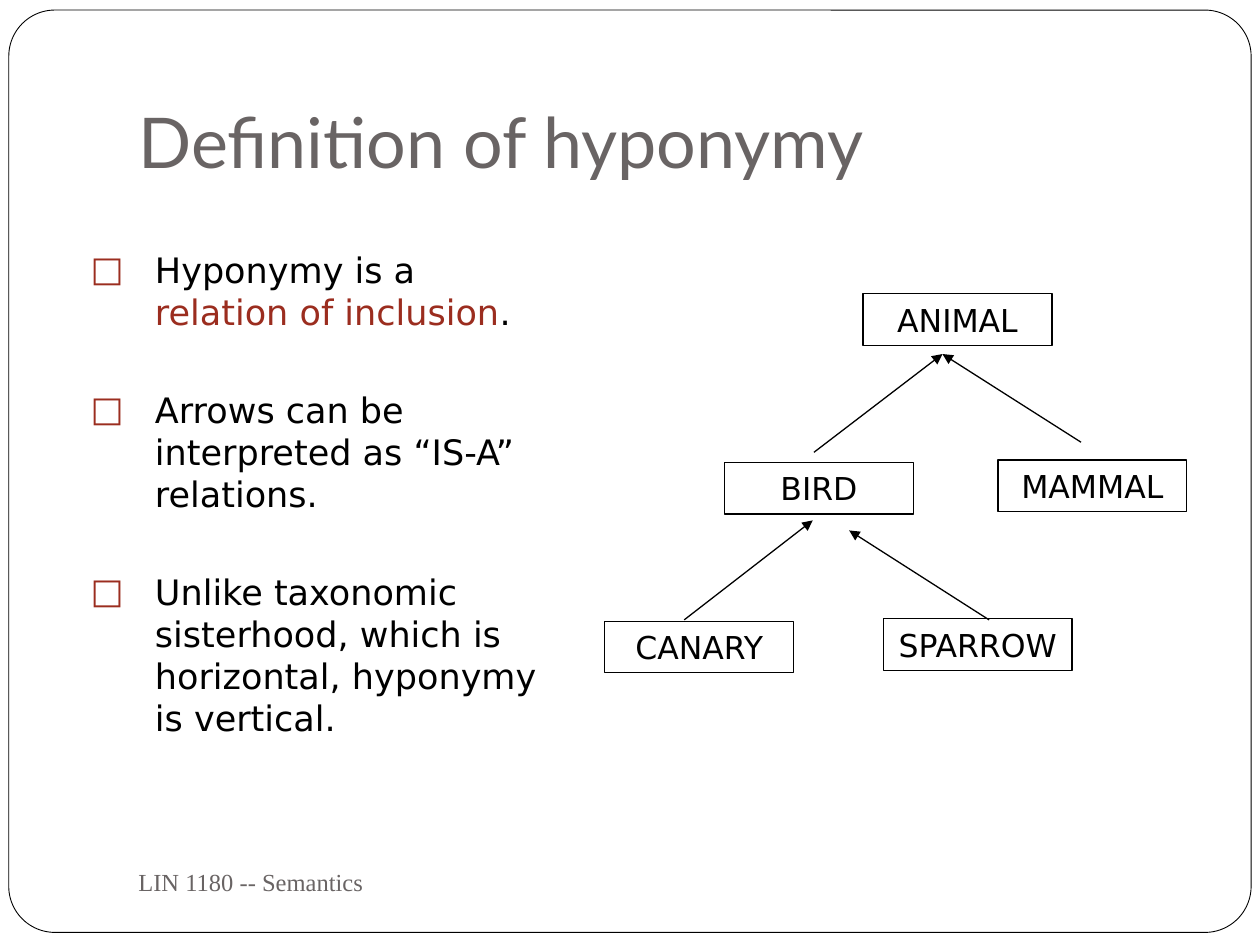
import pptx
import pptx.util
import pptx.dml.color
import pptx.enum.shapes
import pptx.enum.text
import pptx.oxml
import pptx.oxml.ns

COLORS = {"paper": "FFFFFF", "ink": "000000", "gray": "696464", "accent": "9B2D1F"}
ALIGN = pptx.enum.text.PP_ALIGN
ANCHOR = pptx.enum.text.MSO_ANCHOR
SHAPES = pptx.enum.shapes.MSO_SHAPE

presentation = pptx.Presentation()
presentation.slide_width = pptx.util.Inches(10)
presentation.slide_height = pptx.util.Inches(7.5)
slide = presentation.slides.add_slide(presentation.slide_layouts[1])

# Grid of 40 columns by 30 rows
COLUMN = presentation.slide_width / 40
ROW = presentation.slide_height / 30


def place(column, row, *size):
    lengths = [column * COLUMN, row * ROW]
    if size:
        lengths += [size[0] * COLUMN, size[1] * ROW]
    return [pptx.util.Emu(round(length)) for length in lengths]


def add_run(paragraph, text, font_name, size, color):
    run = paragraph.add_run()
    run.text = text
    formats = {"name": font_name, "size": pptx.util.Pt(size)}
    for key, value in formats.items():
        setattr(run.font, key, value)
    run.font.color.rgb = pptx.dml.color.RGBColor.from_string(COLORS[color])


# Rounded frame, then the concept boxes
BOX_SIZE = (6, 1.64)
outlined = [
    ("", SHAPES.ROUNDED_RECTANGLE, (0.28, 0.32, 39.44, 29.28), 0.5),
    ("ANIMAL", SHAPES.RECTANGLE, (27.4, 9.32, *BOX_SIZE), 0.75),
    ("MAMMAL", SHAPES.RECTANGLE, (31.68, 14.6, *BOX_SIZE), 0.75),
    ("BIRD", SHAPES.RECTANGLE, (23, 14.68, *BOX_SIZE), 0.75),
    ("CANARY", SHAPES.RECTANGLE, (19.2, 19.72, *BOX_SIZE), 0.75),
    ("SPARROW", SHAPES.RECTANGLE, (28.04, 19.64, *BOX_SIZE), 0.75),
]
for label, kind, area, line_width in outlined:
    shape = slide.shapes.add_shape(kind, *place(*area))
    shape.shadow.inherit = False
    shape.line.color.rgb = pptx.dml.color.RGBColor.from_string(COLORS["ink"])
    shape.line.width = pptx.util.Pt(line_width)
    if label:
        shape.fill.background()
        shape.text_frame.word_wrap = False
        paragraph = shape.text_frame.paragraphs[0]
        paragraph.alignment = ALIGN.CENTER
        add_run(paragraph, label, "DejaVu Sans", 18, "ink")
    else:
        shape.fill.solid()
        shape.fill.fore_color.rgb = pptx.dml.color.RGBColor.from_string(COLORS["paper"])
        shape.adjustments[0] = 0.05
        # The frame lies behind the placeholders
        slide.shapes.element.insert(2, shape.element)

# Arrows, from the general concept (arrowhead) to the specific one
arrows = [
    ((29.92, 11.24), (25.84, 14.36)),
    ((29.92, 11.24), (34.32, 14.04)),
    ((25.8, 16.52), (21.72, 19.68)),
    ((26.96, 16.84), (31.4, 19.68)),
]
for general, specific in arrows:
    arrow = slide.shapes.add_connector(
        pptx.enum.shapes.MSO_CONNECTOR.STRAIGHT, *place(*general), *place(*specific))
    arrow.line.color.rgb = pptx.dml.color.RGBColor.from_string(COLORS["ink"])
    arrow.line.width = pptx.util.Pt(0.75)
    head = pptx.oxml.parse_xml(
        f'<a:headEnd {pptx.oxml.ns.nsdecls("a")} type="triangle"/>')
    arrow.line._get_or_add_ln().append(head)
    effects = pptx.oxml.parse_xml(f'<a:effectLst {pptx.oxml.ns.nsdecls("a")}/>')
    arrow.element.spPr.append(effects)

# Title, list and footer areas
title = slide.shapes.title
body = slide.placeholders[1]
footer = slide.shapes.add_textbox(*place(4, 27, 17.32, 2))
areas = [
    (title, (4, 1.2, 34, 5), ANCHOR.BOTTOM, 0.1),
    (body, (2.48, 7.68, 15.2, 18.68), ANCHOR.TOP, 0.05),
    (footer, (4, 27, 17.32, 2), ANCHOR.MIDDLE, 0.05),
]
for shape, area, anchor, bottom in areas:
    for key, value in zip(("left", "top", "width", "height"), place(*area)):
        setattr(shape, key, value)
    formats = {
        "word_wrap": True,
        "auto_size": pptx.enum.text.MSO_AUTO_SIZE.NONE,
        "vertical_anchor": anchor,
        "margin_bottom": pptx.util.Inches(bottom),
    }
    for key, value in formats.items():
        setattr(shape.text_frame, key, value)

title_paragraph = title.text_frame.paragraphs[0]
title_paragraph.alignment = ALIGN.LEFT
add_run(title_paragraph, "Definition of hyponymy", "Lato", 40, "gray")
add_run(footer.text_frame.paragraphs[0], "LIN 1180 -- Semantics",
        "Times New Roman", 14, "gray")

# Bulleted list
items = [
    [("Hyponymy is a ", "ink"), ("relation of inclusion", "accent"), (".", "ink")],
    [("Arrows can be interpreted as “IS-A” relations.", "ink")],
    [("Unlike taxonomic sisterhood, which is horizontal, hyponymy is vertical.", "ink")],
]
for index, item in enumerate(items):
    frame = body.text_frame
    paragraph = frame.add_paragraph() if index else frame.paragraphs[0]
    paragraph.space_before = pptx.util.Pt(0)
    paragraph.space_after = pptx.util.Pt(32)
    properties = paragraph._p.get_or_add_pPr()
    indent = pptx.util.Inches(0.51)
    properties.set("marL", str(indent))
    properties.set("indent", str(-indent))
    for bullet in (f'<a:buClr {{}}><a:srgbClr val="{COLORS["accent"]}"/></a:buClr>',
                   '<a:buFont {} typeface="DejaVu Sans"/>',
                   '<a:buChar {} char="□"/>'):
        properties.append(pptx.oxml.parse_xml(bullet.format(pptx.oxml.ns.nsdecls("a"))))
    for text, color in item:
        add_run(paragraph, text, "DejaVu Sans", 20, color)

presentation.save("out.pptx")
